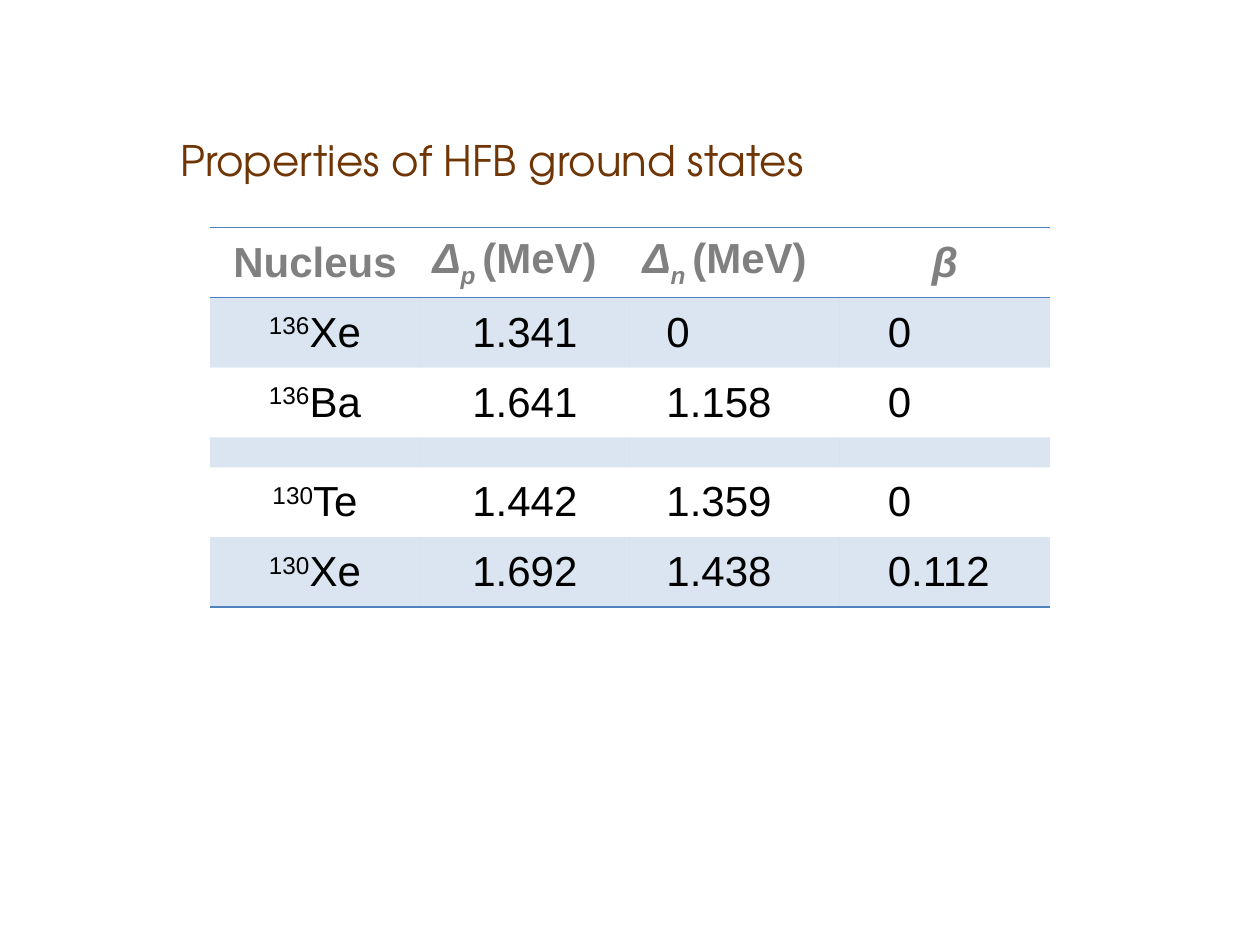
from lxml import etree
from pptx import Presentation, util as u
from pptx.dml.color import RGBColor
from pptx.enum import text
from pptx.oxml.ns import qn

BROWN = RGBColor(0x6F, 0x35, 0x05)
GRAY = RGBColor(0x80, 0x80, 0x80)
BLACK = RGBColor(0, 0, 0)
BLUE = RGBColor(0x4F, 0x81, 0xBD)
PLAIN = "{2D5ABB26-0587-4C30-8999-92F81FD0307C}"
MID, LEFT = text.PP_ALIGN.CENTER, text.PP_ALIGN.LEFT


class Deck:
    """Holds the deck, its current slide and the shared text style."""

    def __init__(self):
        self.prs = Presentation()
        self.prs.slide_width, self.prs.slide_height = u.Inches(10), u.Inches(7.5)
        self.slide = self.prs.slides.add_slide(self.prs.slide_layouts[5])
        self.size = u.Pt(24)

    def area(self, x, y, w, h):
        wide, high = self.prs.slide_width, self.prs.slide_height
        return int(x * wide), int(y * high), int(w * wide), int(h * high)

    def run(self, para, words, color, face="Arial", bold=False, slant=False, base=0):
        run = para.add_run()
        run.text = words
        font = run.font
        font.name, font.size, font.bold, font.italic = face, self.size, bold, slant
        font.color.rgb = color
        if base:
            font._element.set("baseline", str(base * 1000))

    def title(self, words, x, y, w, h):
        box = self.slide.shapes.title
        box.left, box.top, box.width, box.height = self.area(x, y, w, h)
        frame = box.text_frame
        frame.word_wrap = True
        frame.auto_size = text.MSO_AUTO_SIZE.NONE
        frame.vertical_anchor = text.MSO_ANCHOR.TOP
        para = frame.paragraphs[0]
        para.alignment = LEFT
        self.run(para, words, BROWN, "TeX Gyre Adventor")

    def table(self, rows, cols, x, y, w, h, gap):
        area = self.area(x, y, w, h * rows)
        grid = self.slide.shapes.add_table(rows, cols, *area).table
        grid._tbl.tblPr.find(qn("a:tableStyleId")).text = PLAIN
        grid.first_row = grid.horz_banding = False
        grid.rows[gap].height = u.Inches(0.23)
        return grid

    def cell(self, cell, runs, color, align=MID, left=0.1, **style):
        cell.vertical_anchor = text.MSO_ANCHOR.MIDDLE
        cell.margin_left = u.Inches(left)
        para = cell.text_frame.paragraphs[0]
        para.alignment = align
        for words, look in runs:
            self.run(para, words, color, **style, **look)
        if not runs:
            etree.SubElement(para._p, qn("a:endParaRPr"), sz="800")

    def fill(self, cell, shade):
        if not shade:
            cell.fill.background()
            return
        cell.fill.solid()
        cell.fill.fore_color.rgb = BLUE
        tone = cell._tc.tcPr.find(".//" + qn("a:srgbClr"))
        etree.SubElement(tone, qn("a:alpha"), val="20000")

    def rule(self, cell, sides):
        for spot, side in enumerate(sides):
            line = etree.Element(qn("a:ln" + side), w=str(u.Pt(1)))
            paint = etree.SubElement(line, qn("a:solidFill"))
            etree.SubElement(paint, qn("a:srgbClr"), val=str(BLUE))
            cell._tc.tcPr.insert(spot, line)

    def save(self):
        self.prs.save("out.pptx")


def delta(sub):
    return [("Δ", {"slant": True}), (sub + " ", {"slant": True, "base": -25}),
            ("(MeV)", {})]


HEAD = [([("Nucleus", {})], MID), (delta("p"), LEFT), (delta("n"), LEFT),
        ([("β", {"slant": True})], MID)]
DATA = [("136", "Xe", "1.341", "0", "0"),
        ("136", "Ba", "1.641", "1.158", "0"),
        None,
        ("130", "Te", "1.442", "1.359", "0"),
        ("130", "Xe", "1.692", "1.438", "0.112")]
FORM = [(MID, 0.1), (MID, 0.1), (LEFT, 0.29), (LEFT, 0.38)]


def main():
    deck = Deck()
    deck.title("Properties of HFB ground states", 0.133, 0.136, 0.546, 0.067)
    last = len(DATA)
    grid = deck.table(last + 1, len(HEAD), 1 / 6, 0.241, 2 / 3, 0.074, 3)
    for col, (runs, align) in enumerate(HEAD):
        cell = grid.cell(0, col)
        deck.cell(cell, runs, GRAY, align, bold=True)
        deck.fill(cell, False)
        deck.rule(cell, "TB")
    for row, item in enumerate(DATA, 1):
        parts = [[]] * len(HEAD)
        if item:
            mass, name, *nums = item
            parts = [[(mass, {"base": 30}), (name, {})]]
            parts += [[(num, {})] for num in nums]
        for col, (runs, form) in enumerate(zip(parts, FORM)):
            cell = grid.cell(row, col)
            deck.cell(cell, runs, BLACK, *form)
            deck.fill(cell, row % 2)
            if row == last:
                deck.rule(cell, "B")
    deck.save()


if __name__ == "__main__":
    main()
